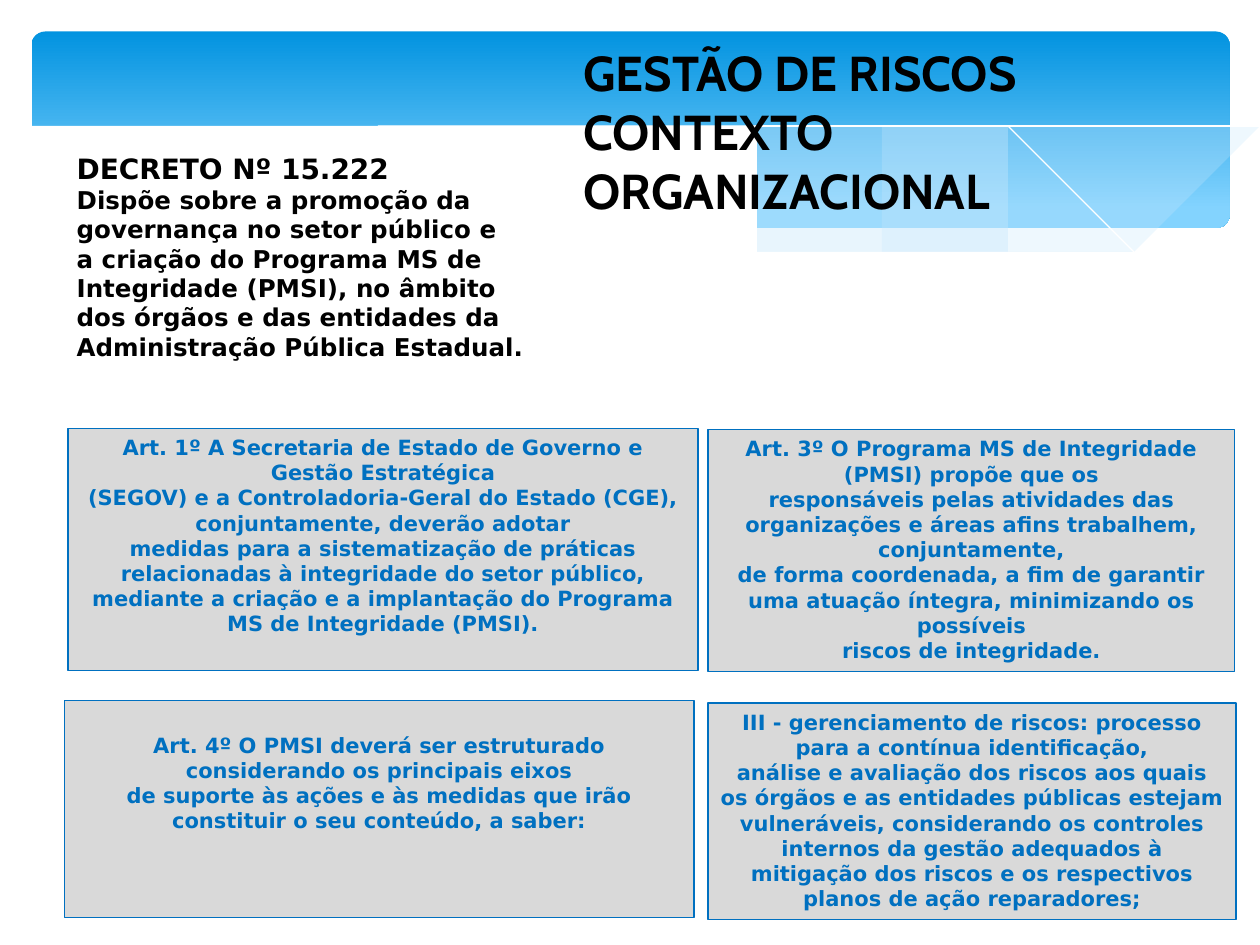
from lxml.etree import SubElement
from pptx import Presentation
from pptx.dml.color import RGBColor
from pptx.enum.shapes import MSO_SHAPE as Shape
from pptx.enum.text import MSO_ANCHOR as Anchor, MSO_AUTO_SIZE as Auto, PP_ALIGN as Align
from pptx.oxml.ns import qn
from pptx.util import Inches, Pt

BLACK, WHITE, BLUE, GREY, PALE = "000000", "FFFFFF", "0070C0", "D9D9D9", "C6E7FC"

WAVE = [(9.77, 1.41), (9.3, 1.57), (8.75, 1.67), (8.09, 1.71), (7.26, 1.67),
        (6.26, 1.53), (5.29, 1.33), (4.47, 1.14), (3.65, 0.96), (2.92, 0.85),
        (2.3, 0.79), (1.77, 0.78), (1.19, 0.82), (0.67, 0.91), (0.4, 1), (0.23, 1.07)]
FLOOR = [(0.23, 2.24), (9.77, 2.24)]
RIGHT_TOP = [(9.76, 0.94), (9.21, 1.04), (8.61, 1.18), (7.79, 1.37), (7.06, 1.52), (6.61, 1.6)]
RIGHT_LOW = [(6.61, 1.6), (7.05, 1.65), (7.57, 1.7), (8.14, 1.72), (8.72, 1.69),
             (9.21, 1.6), (9.76, 1.41)]
MID_TOP = [(8.93, 1.67), (8.07, 1.54), (7.06, 1.34), (6.29, 1.16), (5.55, 1),
           (4.89, 0.89), (4.2, 0.82), (3.61, 0.8), (3.13, 0.82), (2.86, 0.86)]
MID_LOW = [(2.86, 0.86), (3.42, 0.94), (4.27, 1.1), (5.3, 1.35), (6.18, 1.53),
           (6.95, 1.65), (7.61, 1.71), (8.18, 1.73), (8.57, 1.71), (8.93, 1.67)]
FALL = [(3.09, 0.9), (3.53, 0.84), (4.16, 0.81), (4.89, 0.84), (5.56, 0.91),
        (6.36, 1.03), (7.27, 1.2), (8.31, 1.45), (9.07, 1.66)]
RISE = [(6.13, 1.51), (6.95, 1.3), (7.76, 1.11), (8.66, 0.93), (9.24, 0.84), (9.75, 0.8)]

DECREE = ["Dispõe sobre a promoção da", "governança no setor público e",
          "a criação do Programa MS de", "Integridade (PMSI), no âmbito",
          "dos órgãos e das entidades da", "Administração Pública Estadual."]
CARDS = [
    ((0.54, 3.4, 5, 1.92), 0.05, [
        "Art. 1º A Secretaria de Estado de Governo e Gestão Estratégica",
        "(SEGOV) e a Controladoria-Geral do Estado (CGE), conjuntamente, deverão adotar",
        "medidas para a sistematização de práticas relacionadas à integridade do setor público,",
        "mediante a criação e a implantação do Programa MS de Integridade (PMSI)."]),
    ((5.62, 3.41, 4.18, 1.92), 0.05, [
        "Art. 3º O Programa MS de Integridade (PMSI) propõe que os",
        "responsáveis pelas atividades das organizações e áreas afins trabalhem, conjuntamente,",
        "de forma coordenada, a fim de garantir uma atuação íntegra, minimizando os possíveis",
        "riscos de integridade."]),
    ((0.51, 5.56, 5, 1.72), 0.25, [
        "Art. 4º O PMSI deverá ser estruturado considerando os principais eixos",
        "de suporte às ações e às medidas que irão constituir o seu conteúdo, a saber:"]),
    ((5.62, 5.58, 4.19, 1.72), 0.05, [
        "III - gerenciamento de riscos: processo para a contínua identificação,",
        "análise e avaliação dos riscos aos quais os órgãos e as entidades públicas estejam",
        "vulneráveis, considerando os controles internos da gestão adequados à mitigação "
        "dos riscos e os respectivos planos de ação reparadores;"]),
]


def paint(color, tone):
    """Set a colour from a hex string."""
    color.rgb = RGBColor.from_string(tone)


def write(frame, lines, size=12, font="DejaVu Sans", tone=BLACK, align=Align.LEFT, head=None, top=0.05):
    """Fill a text frame with bold lines, the first at its own size if given."""
    frame.word_wrap = True
    frame.auto_size = Auto.NONE
    frame.vertical_anchor = Anchor.TOP
    frame.margin_top = Inches(top)
    for i, text in enumerate(lines):
        para = frame.add_paragraph() if i else frame.paragraphs[0]
        para.alignment = align
        run = para.add_run()
        run.text = text
        run.font.name, run.font.bold = font, True
        run.font.size = Pt(head if head and i == 0 else size)
        paint(run.font.color, tone)


def smooth(knots, steps=5):
    """Return points on a Catmull-Rom curve through the knots."""
    ends = [knots[0], *knots, knots[-1]]
    points = [knots[0]]
    for a, b, c, d in zip(ends, ends[1:], ends[2:], ends[3:]):
        for n in range(1, steps + 1):
            t = n / steps
            points.append(tuple(
                (2 * q + (r - p) * t + (2 * p - 5 * q + 4 * r - s) * t ** 2
                 + (3 * q - p - 3 * r + s) * t ** 3) / 2
                for p, q, r, s in zip(a, b, c, d)))
    return points


def trace(shapes, points, closed):
    """Build a freeform through points given in inches."""
    pen = shapes.build_freeform(*points[0], scale=Inches(1))
    pen.add_line_segments(points[1:], close=closed)
    shape = pen.convert_to_shape()
    shape.shadow.inherit = False
    return shape


def add_area(shapes, points, tone, alpha=100):
    """Add a filled outline with an opacity in percent."""
    area = trace(shapes, points, True)
    area.line.fill.background()
    area.fill.solid()
    paint(area.fill.fore_color, tone)
    if alpha < 100:
        for node in area.element.iter(qn("a:srgbClr")):
            SubElement(node, qn("a:alpha"), val=str(alpha * 1000))


def add_curve(shapes, knots):
    """Add a white hairline curve."""
    curve = trace(shapes, smooth(knots), False)
    curve.fill.background()
    paint(curve.line.color, WHITE)
    curve.line.width = Pt(0)


def add_band(shapes):
    """Add the rounded gradient band at the top."""
    band = shapes.add_shape(Shape.ROUNDED_RECTANGLE, *map(Inches, (0.25, 0.25, 9.51, 1.56)))
    band.adjustments[0] = 0.07
    band.shadow.inherit = False
    band.line.fill.background()
    band.fill.gradient()
    band.fill.gradient_angle = 270
    for stop, place, tone in zip(band.fill.gradient_stops, (0, 0.9), ("0293E0", "83D3FE")):
        stop.position = place
        paint(stop.color, tone)


def add_card(shapes, box, top, lines):
    """Add a grey card with centred blue text."""
    card = shapes.add_shape(Shape.RECTANGLE, *map(Inches, box))
    card.shadow.inherit = False
    card.fill.solid()
    paint(card.fill.fore_color, GREY)
    paint(card.line.color, BLUE)
    card.line.width = Pt(0.75)
    write(card.text_frame, lines, tone=BLUE, align=Align.CENTER, top=top)


def add_title(shapes):
    """Move the title placeholder to the front and fill it."""
    title = shapes.title
    title.left, title.top, title.width, title.height = map(Inches, (4.53, 0.29, 5.28, 1.04))
    title.element.getparent().append(title.element)
    write(title.text_frame, ["GESTÃO DE RISCOS", "CONTEXTO ORGANIZACIONAL"], size=28, font="Cabin")


def main():
    """Build the slide and save it."""
    deck = Presentation()
    deck.slide_width, deck.slide_height = Inches(10), Inches(7.5)
    shapes = deck.slides.add_slide(deck.slide_layouts[5]).shapes
    add_band(shapes)
    add_area(shapes, smooth(RIGHT_TOP) + smooth(RIGHT_LOW), PALE, 29)
    add_area(shapes, smooth(MID_TOP) + smooth(MID_LOW), PALE, 40)
    add_curve(shapes, FALL)
    add_curve(shapes, RISE)
    add_area(shapes, smooth(WAVE) + FLOOR, WHITE)
    add_title(shapes)
    note = shapes.add_textbox(*map(Inches, (0.51, 1.15, 3.82, 1.78)))
    write(note.text_frame, ["DECRETO Nº 15.222", *DECREE], size=14, head=16, align=Align.JUSTIFY)
    for box, top, lines in CARDS:
        add_card(shapes, box, top, lines)
    deck.save("out.pptx")


if __name__ == "__main__":
    main()
